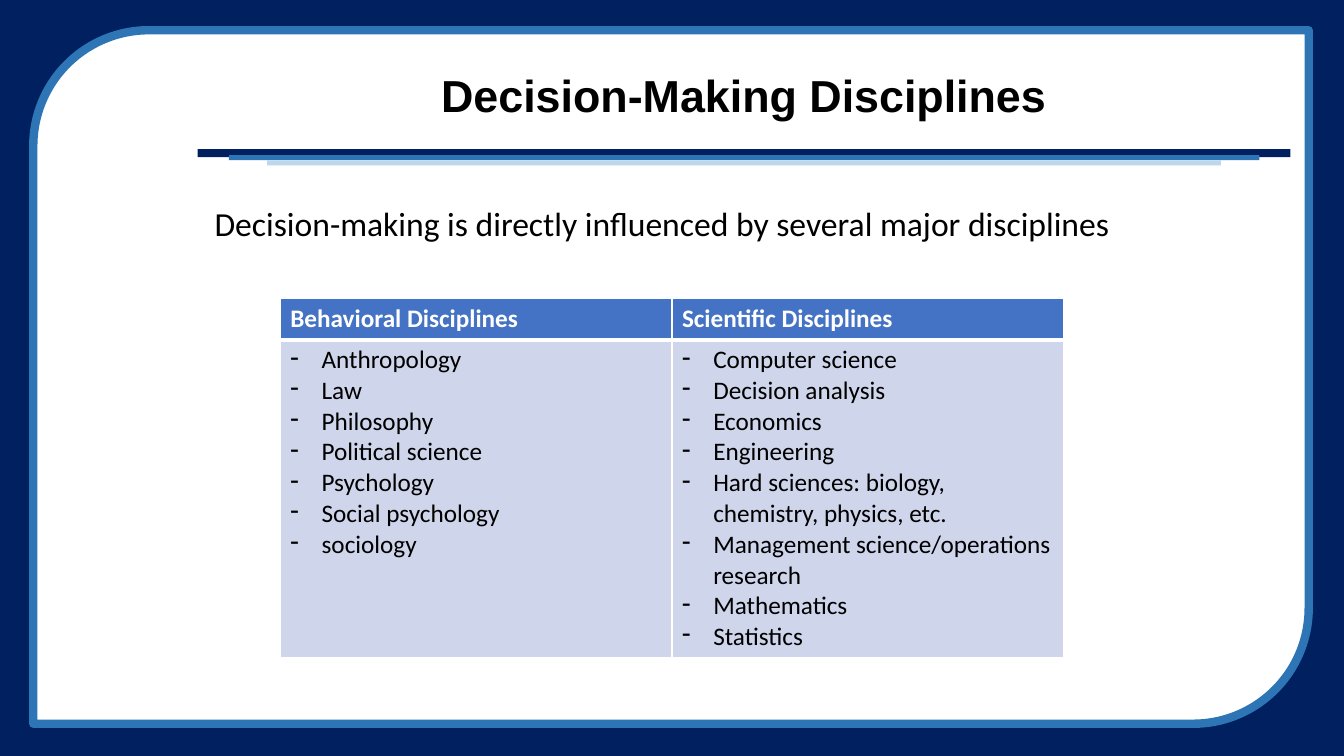
from lxml import etree
from pptx import Presentation
from pptx.dml.color import RGBColor
from pptx.enum.shapes import MSO_SHAPE as Preset
from pptx.enum.text import MSO_ANCHOR as Anchor, PP_ALIGN as Align
from pptx.oxml.ns import qn
from pptx.util import Inches, Pt

NAVY = RGBColor(0x00, 0x20, 0x60)
BLUE = RGBColor(0x2E, 0x75, 0xB6)
PALE_BLUE = RGBColor(0xBD, 0xD7, 0xEE)
HEADER_BLUE = RGBColor(0x44, 0x72, 0xC4)
BODY_BLUE = RGBColor(0xCF, 0xD5, 0xEA)
WHITE = RGBColor(0xFF, 0xFF, 0xFF)
BLACK = RGBColor(0x00, 0x00, 0x00)

WIDTH, HEIGHT = 13.33, 7.5
HEADER_HEIGHT = 0.41
HANGING_INDENT = Inches(0.31)

DISCIPLINES = {
    "Behavioral Disciplines": [
        "Anthropology", "Law", "Philosophy", "Political science",
        "Psychology", "Social psychology", "sociology",
    ],
    "Scientific Disciplines": [
        "Computer science", "Decision analysis", "Economics", "Engineering",
        "Hard sciences: biology, chemistry, physics, etc.",
        "Management science/operations research", "Mathematics", "Statistics",
    ],
}


def set_font(paragraph, name, size, color, bold=False):
    font = paragraph.font
    font.name, font.size, font.bold = name, Pt(size), bold
    font.color.rgb = color


def add_filled_shape(slide, preset, box, color):
    shape = slide.shapes.add_shape(preset, *map(Inches, box))
    shape.shadow.inherit = False
    shape.fill.solid()
    shape.fill.fore_color.rgb = color
    shape.line.fill.background()
    return shape


def add_frame(slide, left, top, width, height):
    add_filled_shape(slide, Preset.RECTANGLE, (0, 0, WIDTH, HEIGHT), NAVY)
    panel = add_filled_shape(slide, Preset.ROUND_2_DIAG_RECTANGLE,
                             (left, top, width, height), WHITE)
    panel.line.color.rgb = BLUE
    panel.line.width = Pt(6)


def add_title(slide, left, top, width, height):
    """Place the title with its three stacked rules just below it."""
    for inset, drop, thickness, color in (
        (0, 0.02, 0.08, NAVY), (0.31, 0.08, 0.05, BLUE), (0.69, 0.13, 0.05, PALE_BLUE),
    ):
        rule = (left + inset, top + height + drop, width - 2 * inset, thickness)
        add_filled_shape(slide, Preset.RECTANGLE, rule, color)

    title = slide.shapes.title
    title.left, title.top, title.width, title.height = map(
        Inches, (left, top, width, height))
    title.text_frame.text = "Decision-Making Disciplines"
    title.text_frame.vertical_anchor = Anchor.MIDDLE
    paragraph = title.text_frame.paragraphs[0]
    paragraph.alignment = Align.CENTER
    paragraph.line_spacing = 0.9
    set_font(paragraph, "Arial", 32, BLACK, bold=True)
    # The frame is drawn later than the placeholder, so bring the title forward.
    slide.shapes._spTree.append(title._element)


def add_introduction(slide, left, top, width, height):
    box = slide.shapes.add_textbox(*map(Inches, (left, top, width, height)))
    box.text_frame.word_wrap = False
    box.text_frame.text = "Decision-making is directly influenced by several major disciplines"
    set_font(box.text_frame.paragraphs[0], "Calibri", 24, BLACK)


def add_borders(cell, **widths):
    """Give the cell white borders, with widths in points by side."""
    properties = cell._tc.get_or_add_tcPr()
    for side in "LRTB":
        line = etree.SubElement(properties, qn(f"a:ln{side}"), w=str(Pt(widths.get(side, 1))))
        fill = etree.SubElement(line, qn("a:solidFill"))
        etree.SubElement(fill, qn("a:srgbClr"), val=str(WHITE))


def fill_cell(cell, color):
    cell.fill.solid()
    cell.fill.fore_color.rgb = color


def add_dash(paragraph):
    properties = paragraph._p.get_or_add_pPr()
    properties.set("marL", str(HANGING_INDENT))
    properties.set("indent", str(-HANGING_INDENT))
    etree.SubElement(properties, qn("a:buFontTx"))
    etree.SubElement(properties, qn("a:buChar"), char="-")


def add_disciplines(slide, left, top, width, height):
    table = slide.shapes.add_table(
        2, len(DISCIPLINES), *map(Inches, (left, top, width, height))).table
    table.rows[0].height = Inches(HEADER_HEIGHT)
    table.rows[1].height = Inches(height - HEADER_HEIGHT)

    for column, (heading, names) in enumerate(DISCIPLINES.items()):
        header, body = table.cell(0, column), table.cell(1, column)
        add_borders(header, B=3)
        fill_cell(header, HEADER_BLUE)
        header.text = heading
        set_font(header.text_frame.paragraphs[0], "Calibri", 18, WHITE, bold=True)

        add_borders(body, T=3)
        fill_cell(body, BODY_BLUE)
        body.text = "\n".join(names)
        for paragraph in body.text_frame.paragraphs:
            add_dash(paragraph)
            set_font(paragraph, "Calibri", 18, BLACK)


def main():
    presentation = Presentation()
    presentation.slide_width = Inches(WIDTH)
    presentation.slide_height = Inches(HEIGHT)
    slide = presentation.slides.add_slide(presentation.slide_layouts.get_by_name("Title Only"))
    add_frame(slide, 0.33, 0.3, 12.65, 6.88)
    add_title(slide, 1.96, 0.49, 10.84, 0.97)
    add_disciplines(slide, 2.78, 2.96, 7.77, 3.55)
    add_introduction(slide, 2.03, 1.96, 9.16, 0.5)
    presentation.save("out.pptx")


if __name__ == "__main__":
    main()
